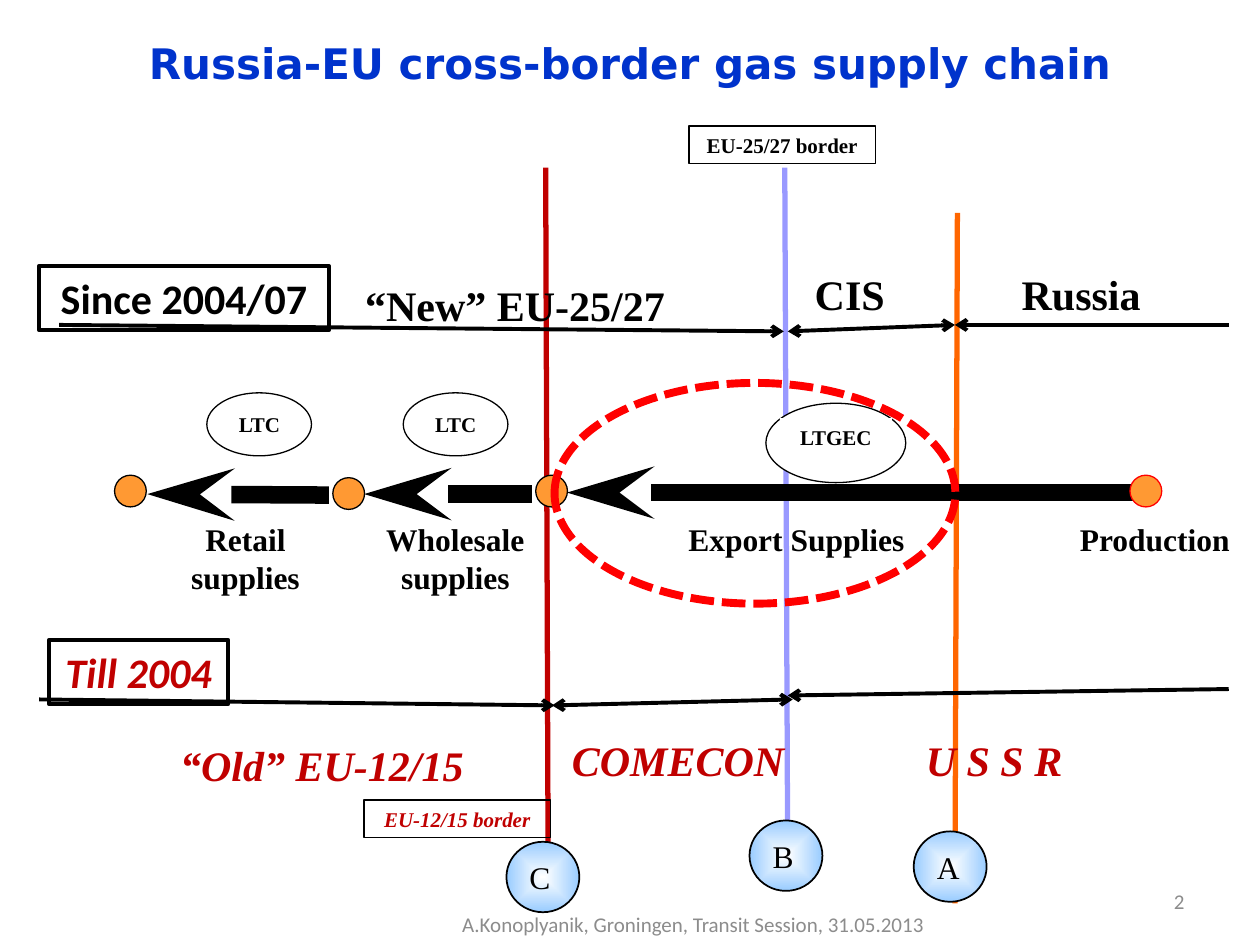
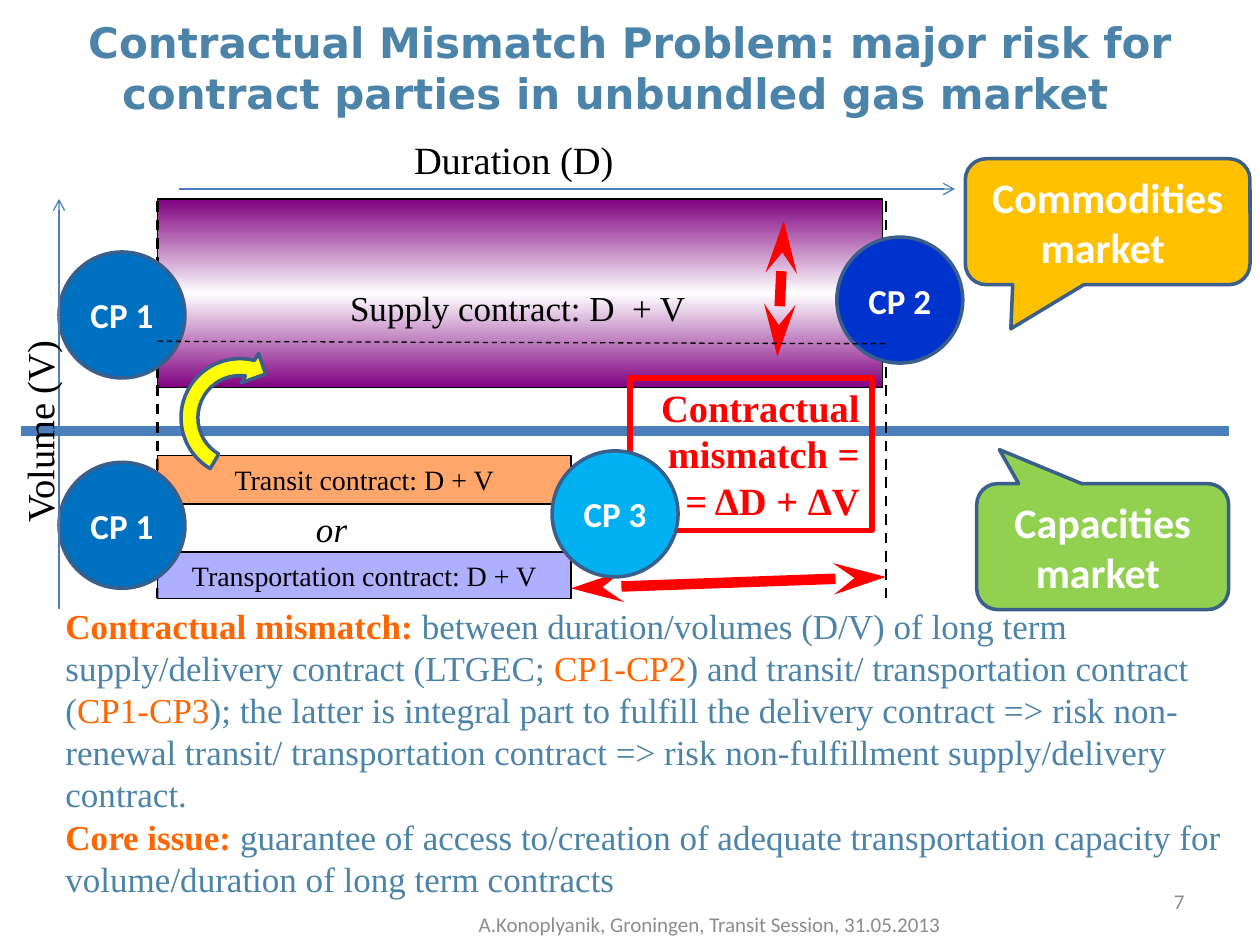
from lxml import etree
from pptx import Presentation
from pptx.dml.color import RGBColor
from pptx.enum.dml import MSO_LINE
from pptx.enum.shapes import MSO_CONNECTOR, MSO_SHAPE
from pptx.enum.text import MSO_ANCHOR, PP_ALIGN
from pptx.oxml import parse_xml
from pptx.oxml.ns import nsdecls, qn
from pptx.util import Cm, Pt

BLACK = RGBColor(0x00, 0x00, 0x00)
WHITE = RGBColor(0xFF, 0xFF, 0xFF)
RED = RGBColor(0xFF, 0x00, 0x00)
DARK_RED = RGBColor(0xC0, 0x00, 0x00)
ORANGE = RGBColor(0xFF, 0x66, 0x00)
NODE_ORANGE = RGBColor(0xFF, 0x99, 0x33)
LILAC = RGBColor(0x99, 0x99, 0xFF)
PALE_BLUE = RGBColor(0x99, 0xCC, 0xFF)
ROYAL_BLUE = RGBColor(0x00, 0x33, 0xCC)
STEEL = RGBColor(0x4B, 0x84, 0xA8)
AXIS_BLUE = RGBColor(0x4B, 0x7E, 0xBC)
OUTLINE_BLUE = RGBColor(0x3A, 0x5F, 0x8C)
PARTY_BLUE = RGBColor(0x00, 0x70, 0xC0)
SKY_BLUE = RGBColor(0x00, 0xB0, 0xF0)
PURPLE = RGBColor(0x80, 0x00, 0x80)
YELLOW = RGBColor(0xFF, 0xFF, 0x00)
AMBER = RGBColor(0xFF, 0xC0, 0x00)
GREEN = RGBColor(0x92, 0xD0, 0x50)
GREY = RGBColor(0x8C, 0x8C, 0x8C)

SERIF, SANS, TITLE_FONT = "Times New Roman", "Calibri", "DejaVu Sans"
LEFT, CENTER, RIGHT = PP_ALIGN.LEFT, PP_ALIGN.CENTER, PP_ALIGN.RIGHT
TOP, MIDDLE = MSO_ANCHOR.TOP, MSO_ANCHOR.MIDDLE
RECT, OVAL = MSO_SHAPE.RECTANGLE, MSO_SHAPE.OVAL
CALLOUT = MSO_SHAPE.ROUNDED_RECTANGULAR_CALLOUT
CIRCULAR_ARROW = MSO_SHAPE.CIRCULAR_ARROW
STRAIGHT = MSO_CONNECTOR.STRAIGHT
DASH, SHORT_DASH = MSO_LINE.DASH, MSO_LINE.SQUARE_DOT

WIDTH, HEIGHT = 25.4, 19.05
LINEAR = '<a:lin ang="5400000" scaled="1"/>'
RADIAL = ('<a:path path="shape"><a:fillToRect l="50000" t="50000" '
          'r="50000" b="50000"/></a:path>')


class Sketch:
    """Draws on the current page; places are (left, top, width, height) in cm."""

    def __init__(self, deck):
        self.deck = deck
        self.page = None

    def new_page(self, number, footer_width):
        self.page = self.deck.slides.add_slide(self.deck.slide_layouts[6])
        small = dict(size=12, font=SANS, color=GREY, anchor=MIDDLE)
        self.label("A.Konoplyanik, Groningen, Transit Session, 31.05.2013",
                   (8.69, 18.11, footer_width, 1.02), **small)
        self.label(str(number), (18.21, 17.65, 5.92, 1.02), align=RIGHT, **small)

    def title(self, text, place, color):
        self.label(text, place, 24, color, TITLE_FONT, bold=True, anchor=MIDDLE)

    def set_text(self, shape, text, size, color=BLACK, font=SERIF, bold=False,
                 italic=False, align=CENTER, anchor=TOP, wrap=True):
        frame = shape.text_frame
        frame.word_wrap = wrap
        frame.vertical_anchor = anchor
        frame.text = text
        for para in frame.paragraphs:
            para.alignment = align
            para.font.size = Pt(size)
            para.font.name = font
            para.font.bold = bold
            para.font.italic = italic
            para.font.color.rgb = color

    def label(self, text, place, size, color=BLACK, font=SERIF, into=None, **style):
        box = (into or self.page).shapes.add_textbox(*map(Cm, place))
        self.set_text(box, text, size, color, font, **style)
        return box

    def shape(self, kind, place, fill=None, line=BLACK, weight=0.75, into=None):
        box = (into or self.page).shapes.add_shape(kind, *map(Cm, place))
        box.shadow.inherit = False
        if fill is None:
            box.fill.background()
        else:
            box.fill.solid()
            box.fill.fore_color.rgb = fill
        box.line.color.rgb = line
        box.line.width = Pt(weight)
        return box

    def badge(self, text, oval, inner, fill=None):
        """Groups an oval with the label inside it."""
        group = self.page.shapes.add_group_shape()
        self.shape(OVAL, oval, fill, into=group)
        box = self.label(text, inner, 12, bold=True, into=group)
        if fill is not None:
            box.fill.solid()
            box.fill.fore_color.rgb = fill

    def line(self, start, end, color=BLACK, weight=2.25, dash=None,
             head=None, tail=None, length="med"):
        line = self.page.shapes.add_connector(STRAIGHT, *map(Cm, start + end))
        line.line.color.rgb = color
        line.line.width = Pt(weight)
        if dash is not None:
            line.line.dash_style = dash
        properties = line.element.spPr
        outline = properties.find(qn("a:ln"))
        for tag, kind in (("a:headEnd", head), ("a:tailEnd", tail)):
            if kind:
                etree.SubElement(outline, qn(tag), type=kind, w="med", len=length)
        etree.SubElement(properties, qn("a:effectLst"))


def set_gradient(shape, colors, direction):
    """Fills the shape with evenly spaced colours along the given direction."""
    step = 100000 // (len(colors) - 1)
    stops = "".join(f'<a:gs pos="{i * step}"><a:srgbClr val="{color}"/></a:gs>'
                    for i, color in enumerate(colors))
    fill = parse_xml(f'<a:gradFill {nsdecls("a")} rotWithShape="1">'
                     f'<a:gsLst>{stops}</a:gsLst>{direction}</a:gradFill>')
    properties = shape.element.spPr
    properties.remove(properties.find(qn("a:noFill")))
    properties.find(qn("a:prstGeom")).addnext(fill)


def set_opacity(shape, percent):
    color = shape.element.spPr.find(qn("a:solidFill")).find(qn("a:srgbClr"))
    etree.SubElement(color, qn("a:alpha"), val=str(percent * 1000))


def draw_supply_chain(sketch):
    sketch.new_page(2, 10.57)
    sketch.title("Russia-EU cross-border gas supply chain",
                 (0, 0, WIDTH, 2.54), ROYAL_BLUE)

    borders = [((11, 3.38), (11.05, 17.58), DARK_RED),
               ((15.82, 3.38), (15.88, 17.58), LILAC),
               ((19.3, 4.29), (19.25, 18.21), ORANGE)]
    for start, end, color in borders:
        sketch.line(start, end, color, 3)

    supply_flows = [((22.86, 9.93), (11.43, 9.93)),
                    ((10.72, 9.96), (7.34, 9.96)),
                    ((6.63, 9.98), (2.97, 9.96))]
    for start, end in supply_flows:
        sketch.line(start, end, weight=10, tail="stealth", length="lg")

    for left in (4.17, 8.13):
        sketch.badge("LTC", (left, 7.92, 2.11, 1.27), (left + 0.21, 8.18, 1.7, 0.76))
    sketch.badge("LTGEC", (15.44, 8.13, 2.82, 1.6), (15.72, 8.43, 2.26, 0.71), WHITE)

    nodes = [(2.31, 9.58, BLACK), (6.71, 9.63, BLACK),
             (10.8, 9.58, BLACK), (22.78, 9.58, RED)]
    for left, top, line in nodes:
        sketch.shape(OVAL, (left, top, 0.64, 0.64), NODE_ORANGE, line)

    stages = [("Retail supplies", 2.97, 3.96, 1.8),
              ("Wholesale supplies", 7.06, 4.24, 1.8),
              ("Export Supplies", 12.5, 7.11, 1.02),
              ("Production", 21.16, 4.24, 1.02)]
    for text, left, width, height in stages:
        sketch.label(text, (left, 10.36, width, height), 18, bold=True)

    single = dict(tail="arrow")
    double = dict(head="arrow", tail="arrow")
    region_spans = [((1.19, 6.55), (15.8, 6.68), single),
                    ((15.88, 6.68), (19.25, 6.55), double),
                    ((24.77, 6.55), (19.25, 6.55), single),
                    ((0.79, 14.1), (11.18, 14.22), single),
                    ((11.13, 14.22), (15.98, 14.1), double),
                    ((24.77, 13.89), (15.88, 14.02), single)]
    for start, end, arrows in region_spans:
        sketch.line(start, end, **arrows)

    now = dict(color=BLACK, bold=True)
    before = dict(color=DARK_RED, bold=True, italic=True)
    regions = [("“New” EU-25/27", (7.11, 5.51, 7.59, 1.3), LEFT, now),
               ("CIS", (15.44, 5.28, 3.38, 1.27), CENTER, now),
               ("Russia", (19.89, 5.28, 3.81, 1.27), CENTER, now),
               ("“Old” EU-12/15", (3.38, 14.78, 7.59, 1.3), LEFT, before),
               ("COMECON", (11.13, 14.68, 5.08, 1.3), CENTER, before),
               ("U S S R", (17.5, 14.68, 5.08, 1.27), CENTER, before)]
    for text, place, align, style in regions:
        sketch.label(text, place, 24, align=align, **style)

    frames = [("Since 2004/07", (0.79, 5.36, 5.84, 1.3), 24, SANS, 2.25, now),
              ("Till 2004", (0.99, 12.9, 3.61, 1.3), 24, SANS, 2.25, before),
              ("EU-25/27 border", (13.89, 2.54, 3.76, 0.76), 12, SERIF, 0.75, now),
              ("EU-12/15 border", (7.34, 16.13, 3.76, 0.76), 12, SERIF, 0.75, before)]
    for text, place, size, font, weight, style in frames:
        box = sketch.shape(RECT, place, weight=weight)
        sketch.set_text(box, text, size, font=font, **style)

    export_zone = sketch.shape(OVAL, (11.18, 7.72, 8.08, 4.45), line=RED, weight=4.5)
    export_zone.line.dash_style = SHORT_DASH

    for letter, left, top in (("C", 10.21, 16.97), ("B", 15.11, 16.54),
                              ("A", 18.42, 16.76)):
        point = sketch.shape(OVAL, (left, top, 1.47, 1.42), weight=1)
        set_gradient(point, [WHITE, PALE_BLUE], RADIAL)
        sketch.set_text(point, letter, 18, align=LEFT, anchor=MIDDLE, wrap=False)


def add_explanation(sketch):
    paragraphs = [
        [("Contractual mismatch:", ORANGE, True),
         (" between duration/volumes (D/V) of long term supply/delivery contract "
          "(LTGEC; ", STEEL, False),
         ("CP1-CP2", ORANGE, False),
         (") and transit/ transportation contract (", STEEL, False),
         ("CP1-CP3", ORANGE, False),
         ("); the latter is integral part to fulfill the delivery contract => risk "
          "non-renewal transit/ transportation contract => risk non-fulfillment "
          "supply/delivery contract.", STEEL, False)],
        [("Core issue: ", ORANGE, True),
         ("guarantee of access to/creation of adequate transportation capacity for "
          "volume/duration of long term contracts", STEEL, False)]]
    box = sketch.page.shapes.add_textbox(*map(Cm, (1.07, 12.07, 23.93, 6.25)))
    frame = box.text_frame
    frame.word_wrap = True
    for index, spans in enumerate(paragraphs):
        para = frame.add_paragraph() if index else frame.paragraphs[0]
        para.font.size = Pt(20)
        para.font.name = SERIF
        for text, color, bold in spans:
            span = para.add_run()
            span.text = text
            span.font.color.rgb = color
            span.font.bold = bold


def draw_mismatch(sketch):
    sketch.new_page(7, 11.23)
    sketch.line((0.43, 8.69), (24.77, 8.69), AXIS_BLUE, 6)
    sketch.title("Contractual Mismatch Problem: major risk for contract parties "
                 "in unbundled gas market  ", (0, 0.2, WIDTH, 2.31), STEEL)

    start, end = 3.18, 17.86
    supply = sketch.shape(RECT, (start, 4.01, 14.61, 3.81))
    set_gradient(supply, [PURPLE, WHITE, PURPLE], LINEAR)
    sketch.label("Supply contract: D  + V", (6.45, 5.66, 7.98, 1.09), 20)
    for left in (start, end):
        sketch.line((left, 4.06), (left, 12.07), weight=1.5, dash=DASH)

    contracts = [("Transportation contract: D + V", 11.13, 0.94, LILAC, 78),
                 ("Transit contract: D + V", 9.19, 0.97, ORANGE, 58)]
    for text, top, height, fill, opacity in contracts:
        bar = sketch.shape(RECT, (start, top, 8.33, height), fill)
        set_opacity(bar, opacity)
        sketch.set_text(bar, text, 16)
    sketch.label("or", (5.49, 10.11, 2.39, 1.09), 20, italic=True)

    for tip, other_tip in (((11.51, 11.86), (end, 11.63)),
                           ((15.8, 4.45), (15.67, 7.19))):
        sketch.line(tip, other_tip, RED, 6, head="stealth", tail="stealth",
                    length="lg")
    mismatch = sketch.shape(RECT, (12.7, 7.62, 4.88, 3.07), line=RED, weight=3)
    sketch.set_text(mismatch, "Contractual mismatch =\n= ΔD + ΔV", 22, RED,
                    bold=True, align=RIGHT)
    add_explanation(sketch)

    parties = [("CP 1", 1.19, 5.08, PARTY_BLUE), ("CP 1", 1.19, 9.32, PARTY_BLUE),
               ("CP 3", 11.13, 9.09, SKY_BLUE), ("CP 2", 16.87, 4.78, ROYAL_BLUE)]
    for name, left, top, fill in parties:
        party = sketch.shape(OVAL, (left, top, 2.54, 2.54), fill, OUTLINE_BLUE, 2)
        sketch.set_text(party, name, 20, WHITE, SANS, bold=True, anchor=MIDDLE,
                        wrap=False)

    sketch.line((1.19, 12.27), (1.19, 4.01), AXIS_BLUE, 0.75, tail="arrow")
    sketch.line((3.61, 3.81), (19.25, 3.81), AXIS_BLUE, 0.75, tail="arrow")
    sketch.label("Duration (D) ", (3.05, 2.62, 14.81, 1.19), 22)
    volume = sketch.label("Volume (V)", (-1.75, 7.65, 5.08, 1.19), 22, align=LEFT)
    volume.rotation = 270
    sketch.line((start, 6.88), (end, 6.93), weight=0.75, dash=DASH)

    turn = sketch.shape(CIRCULAR_ARROW, (3.48, 7.06, 2.72, 2.72), YELLOW,
                        OUTLINE_BLUE, 2)
    turn.rotation = 300.4

    markets = [("Commodities market ", (19.46, 3.2, 5.74, 2.54), AMBER, (-0.34, 0.85)),
               ("Capacities market ", (19.69, 9.75, 5.08, 2.54), GREEN, (-0.41, -0.77))]
    for text, place, fill, pointer in markets:
        market = sketch.shape(CALLOUT, place, fill, OUTLINE_BLUE, 2)
        market.adjustments[0], market.adjustments[1] = pointer
        sketch.set_text(market, text, 24, WHITE, SANS, bold=True, anchor=MIDDLE)


def main():
    deck = Presentation()
    deck.slide_width, deck.slide_height = Cm(WIDTH), Cm(HEIGHT)
    sketch = Sketch(deck)
    draw_supply_chain(sketch)
    draw_mismatch(sketch)
    deck.save("out.pptx")


if __name__ == "__main__":
    main()
